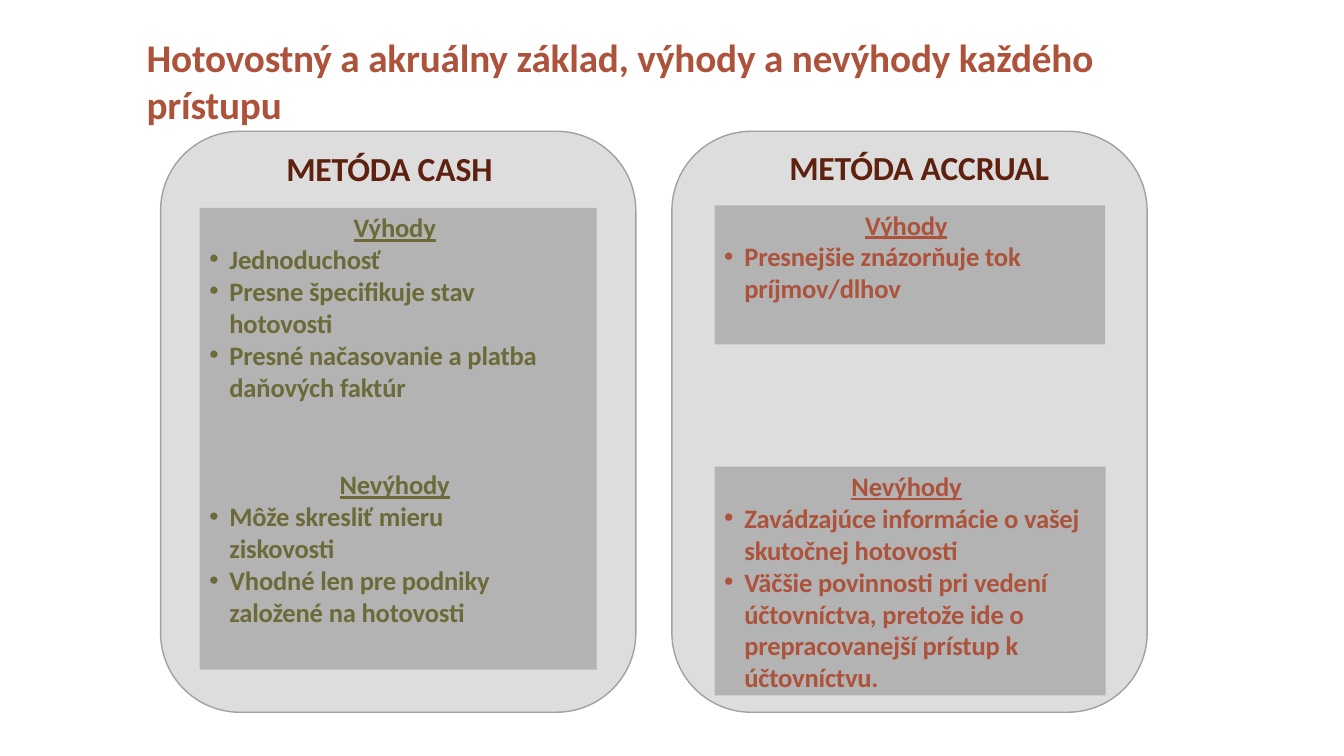
from dataclasses import dataclass

from lxml.etree import SubElement
from pptx import Presentation
from pptx.dml.color import RGBColor
from pptx.enum.shapes import MSO_SHAPE as Shape
from pptx.enum.text import MSO_ANCHOR as Anchor, MSO_AUTO_SIZE as AutoSize, PP_ALIGN as Align
from pptx.oxml.ns import qn
from pptx.util import Pt

TITLE = "Hotovostný a akruálny základ, výhody a nevýhody každého prístupu"

# Each box holds (heading, bullets) sections; frames are left, top, width, height.
METHODS = [
    {
        "name": "METÓDA CASH",
        "name_frame": (204.5, 105, 154, 31),
        "color": "cash",
        "bullet_right": 37,
        "boxes": [
            ((142.6, 148.5, 283.7, 329.8), [
                ("Výhody", ["Jednoduchosť",
                            "Presne špecifikuje stav hotovosti",
                            "Presné načasovanie a platba daňových faktúr"]),
                ("Nevýhody", ["Môže skresliť mieru ziskovosti",
                              "Vhodné len pre podniky založené na hotovosti"]),
            ]),
        ],
    },
    {
        "name": "METÓDA ACCRUAL",
        "name_frame": (563.8, 104, 194, 31),
        "color": "accrual",
        "bullet_right": 0,
        "boxes": [
            ((510.4, 146.7, 279, 99.3), [
                ("Výhody", ["Presnejšie znázorňuje tok príjmov/dlhov"]),
            ]),
            ((510.4, 333.4, 279.3, 163.4), [
                ("Nevýhody", ["Zavádzajúce informácie o vašej skutočnej hotovosti",
                              "Väčšie povinnosti pri vedení účtovníctva, pretože ide o "
                              "prepracovanejší prístup k účtovníctvu."]),
            ]),
        ],
    },
]


@dataclass(frozen=True)
class Theme:
    font: str = "Calibri"
    title: str = "AD523B"
    name: str = "5F210F"
    cash: str = "6C6A39"
    accrual: str = "AD523B"
    panel: str = "DDDDDD"
    panel_line: str = "A1A1A1"
    box: str = "B3B3B3"
    title_size: float = 28
    name_size: float = 24
    body_size: float = 19


THEME = Theme()
SLIDE_SIZE = (960, 540)
TITLE_FRAME = (104.7, 23, 751, 35.3)
PANEL_LEFT, PANEL_TOP, PANEL_WIDTH, PANEL_HEIGHT = 114.7, 93.8, 339.5, 415
PANEL_STEP = 365.2
CORNER = 0.167
SECTION_GAP = 47
HEADING_RIGHT = 5
BULLET_INDENT, BULLET_HANG = 21.3, 14.4


def points(values):
    return [Pt(value) for value in values]


def add_filled(slide, kind, frame, fill):
    shape = slide.shapes.add_shape(kind, *points(frame))
    shape.shadow.inherit = False
    shape.fill.solid()
    shape.fill.fore_color.rgb = RGBColor.from_string(fill)
    shape.line.fill.background()
    return shape


def prepare_frame(shape, top_inset):
    frame = shape.text_frame
    frame.word_wrap = True
    frame.auto_size = AutoSize.NONE
    frame.vertical_anchor = Anchor.TOP
    frame.margin_left = frame.margin_right = frame.margin_bottom = 0
    frame.margin_top = Pt(top_inset)
    return frame


def write(paragraph, text, size, color, align=Align.LEFT):
    """Fill a paragraph with bold, slightly tightened text."""
    run = paragraph.add_run()
    run.text = text
    run._r.get_or_add_rPr().set("spc", "-10")
    paragraph.alignment = align
    paragraph.font.name = THEME.font
    paragraph.font.size = Pt(size)
    paragraph.font.bold = True
    paragraph.font.color.rgb = RGBColor.from_string(color)


def set_indents(paragraph, left=0, hanging=0, right=0):
    properties = paragraph._p.get_or_add_pPr()
    for key, value in (("marL", left), ("marR", right), ("indent", -hanging)):
        properties.set(key, str(Pt(value)))
    return properties


def add_box(slide, frame, sections, color, bullet_right):
    box = add_filled(slide, Shape.RECTANGLE, frame, THEME.box)
    text = prepare_frame(box, 2.2)
    for index, (heading, bullets) in enumerate(sections):
        paragraph = text.add_paragraph() if index else text.paragraphs[0]
        set_indents(paragraph, right=HEADING_RIGHT)
        if index:
            paragraph.space_before = Pt(SECTION_GAP)
        write(paragraph, heading, THEME.body_size, color, Align.CENTER)
        paragraph.runs[0].font.underline = True
        for bullet in bullets:
            paragraph = text.add_paragraph()
            properties = set_indents(paragraph, BULLET_INDENT, BULLET_HANG, bullet_right)
            SubElement(properties, qn("a:buFont"), typeface="Arial")
            SubElement(properties, qn("a:buChar"), char="•")
            write(paragraph, bullet, THEME.body_size, color)


def add_method(slide, index, method):
    left = PANEL_LEFT + index * PANEL_STEP
    panel = add_filled(slide, Shape.ROUNDED_RECTANGLE,
                       (left, PANEL_TOP, PANEL_WIDTH, PANEL_HEIGHT), THEME.panel)
    panel.adjustments[0] = CORNER
    panel.line.color.rgb = RGBColor.from_string(THEME.panel_line)
    panel.line.width = Pt(1)

    name = slide.shapes.add_textbox(*points(method["name_frame"]))
    write(prepare_frame(name, 1).paragraphs[0], method["name"], THEME.name_size, THEME.name)
    for frame, sections in method["boxes"]:
        add_box(slide, frame, sections, getattr(THEME, method["color"]), method["bullet_right"])


def main():
    presentation = Presentation()
    presentation.slide_width, presentation.slide_height = points(SLIDE_SIZE)
    slide = presentation.slides.add_slide(presentation.slide_layouts[5])

    title = slide.shapes.title
    title.left, title.top, title.width, title.height = points(TITLE_FRAME)
    write(prepare_frame(title, 1).paragraphs[0], TITLE, THEME.title_size, THEME.title)

    for index, method in enumerate(METHODS):
        add_method(slide, index, method)
    presentation.save("out.pptx")


if __name__ == "__main__":
    main()
